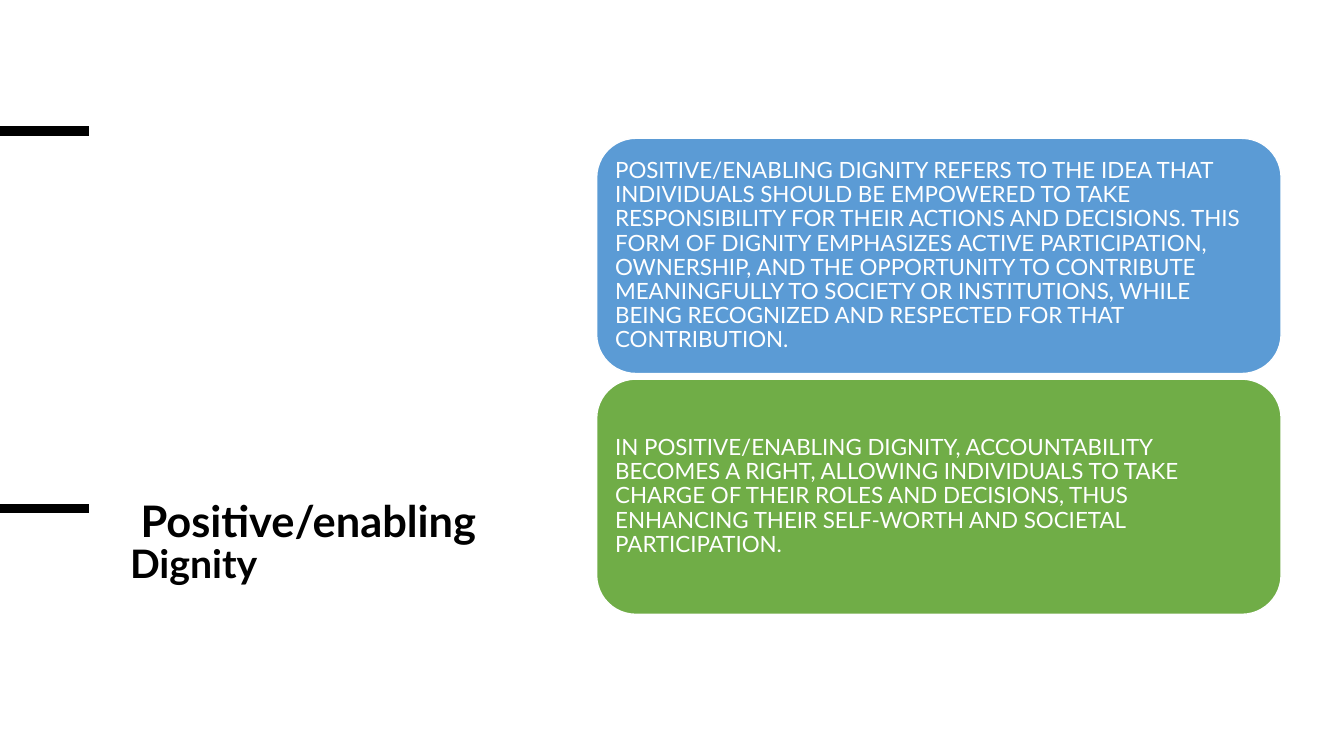
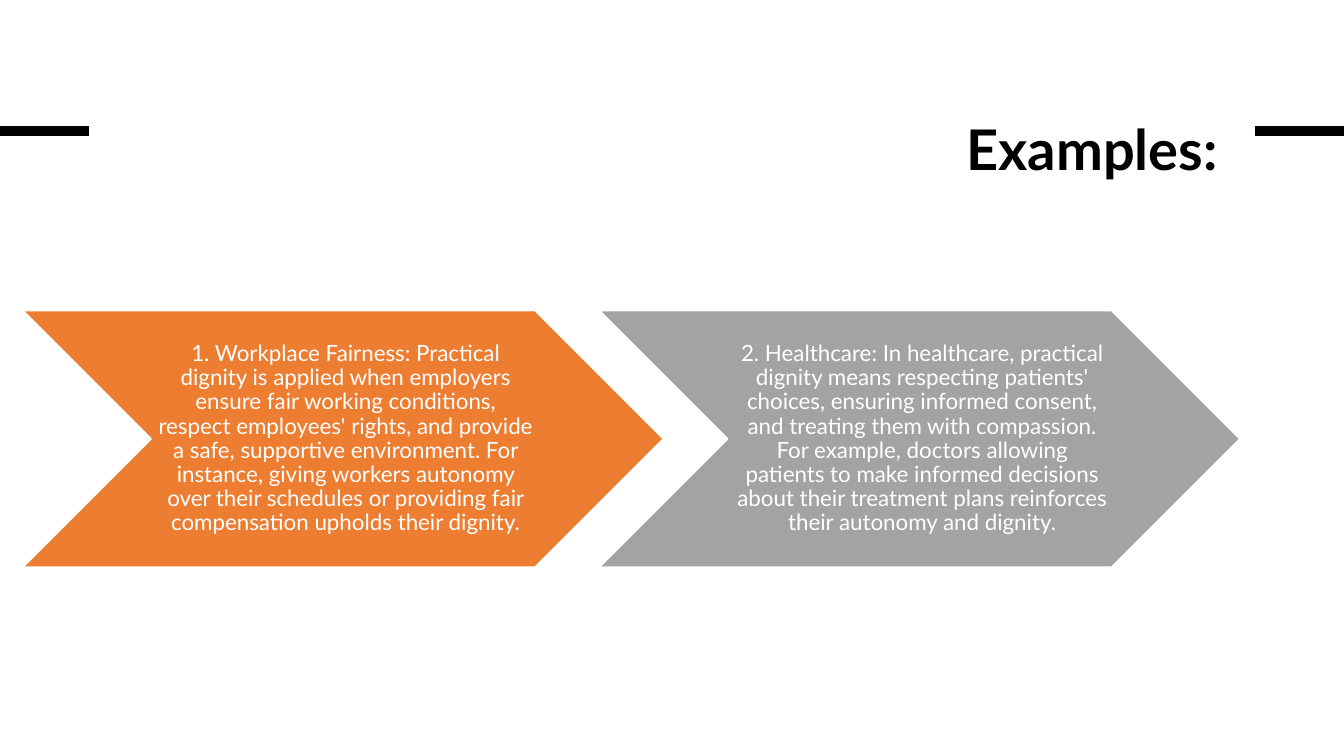
from lxml.etree import SubElement
from pptx import Presentation
from pptx.dml.color import RGBColor
from pptx.enum.shapes import MSO_CONNECTOR, MSO_SHAPE
from pptx.enum.text import MSO_ANCHOR, MSO_AUTO_SIZE, PP_ALIGN
from pptx.oxml.ns import qn
from pptx.util import Pt

WIDTH, HEIGHT = 960, 540
FONT = "Lato"
COLORS = {"black": "000000", "white": "FFFFFF", "blue": "5B9BD5",
          "green": "70AD47", "orange": "ED7D31", "gray": "A3A3A3"}

BAR_LENGTH, BAR_TOP, BAR_WEIGHT = 63.5, 93.6, 6.75
RIGHT_BAR_LEFT = WIDTH - BAR_LENGTH

SLIDES = [
    {
        "title": [(" Positive/enabling ", 31), ("Dignity", 28)],
        "title_box": (85.7, 355, 298, 141),
        "title_align": PP_ALIGN.LEFT,
        "extra_bar": (0, 362.9, 6.5),
        "shape": MSO_SHAPE.ROUNDED_RECTANGLE,
        "first_box": (426.2, 98.8, 488.9, 168),
        "step": (0, 172),
        "insets": (5, 5, 5, 5),
        "align": PP_ALIGN.LEFT,
        "blocks": [
            ("blue", "POSITIVE/ENABLING DIGNITY REFERS TO THE IDEA THAT INDIVIDUALS "
                     "SHOULD BE EMPOWERED TO TAKE RESPONSIBILITY FOR THEIR ACTIONS AND "
                     "DECISIONS. THIS FORM OF DIGNITY EMPHASIZES ACTIVE PARTICIPATION, "
                     "OWNERSHIP, AND THE OPPORTUNITY TO CONTRIBUTE MEANINGFULLY TO "
                     "SOCIETY OR INSTITUTIONS, WHILE BEING RECOGNIZED AND RESPECTED FOR "
                     "THAT CONTRIBUTION."),
            ("green", "IN POSITIVE/ENABLING DIGNITY, ACCOUNTABILITY BECOMES A RIGHT, "
                      "ALLOWING INDIVIDUALS TO TAKE CHARGE OF THEIR ROLES AND DECISIONS, "
                      "THUS ENHANCING THEIR SELF-WORTH AND SOCIETAL PARTICIPATION."),
        ],
    },
    {
        "title": [("Examples:", 40)],
        "title_box": (374.4, 85.7, 502.6, 123),
        "title_align": PP_ALIGN.RIGHT,
        "extra_bar": (RIGHT_BAR_LEFT, BAR_TOP, BAR_WEIGHT),
        "shape": MSO_SHAPE.CHEVRON,
        "first_box": (16.5, 222, 457.2, 183),
        "step": (411.8, 0),
        "insets": (5, 1.3, 1.3, 1.3),
        "align": PP_ALIGN.CENTER,
        "blocks": [
            ("orange", "1. Workplace Fairness: Practical dignity is applied when employers "
                       "ensure fair working conditions, respect employees' rights, and "
                       "provide a safe, supportive environment. For instance, giving "
                       "workers autonomy over their schedules or providing fair "
                       "compensation upholds their dignity."),
            ("gray", "2. Healthcare: In healthcare, practical dignity means respecting "
                     "patients' choices, ensuring informed consent, and treating them with "
                     "compassion. For example, doctors allowing patients to make informed "
                     "decisions about their treatment plans reinforces their autonomy and "
                     "dignity."),
        ],
    },
]


def color(name):
    return RGBColor.from_string(COLORS[name])


def set_insets(frame, left, top, right, bottom):
    frame.margin_left, frame.margin_top = Pt(left), Pt(top)
    frame.margin_right, frame.margin_bottom = Pt(right), Pt(bottom)


def add_bar(slide, left, top, weight):
    bar = slide.shapes.add_connector(MSO_CONNECTOR.STRAIGHT, Pt(left), Pt(top),
                                     Pt(left + BAR_LENGTH), Pt(top))
    bar.line.color.rgb = color("black")
    bar.line.width = Pt(weight)
    SubElement(bar._element.spPr, qn("a:effectLst"))


def format_title(slide, runs, box, align):
    title = slide.shapes.title
    title.left, title.top, title.width, title.height = map(Pt, box)
    frame = title.text_frame
    frame.word_wrap = True
    frame.auto_size = MSO_AUTO_SIZE.NONE
    frame.vertical_anchor = MSO_ANCHOR.TOP
    paragraph = frame.paragraphs[0]
    paragraph.alignment = align
    paragraph.line_spacing = 0.85
    paragraph.font.name = FONT
    paragraph.font.bold = True
    paragraph.font.color.rgb = color("black")
    for text, size in runs:
        run = paragraph.add_run()
        run.text = text
        run.font.size = Pt(size)


def add_block(slide, kind, box, fill, text, insets, align):
    shape = slide.shapes.add_shape(kind, *map(Pt, box))
    shape.shadow.inherit = False
    shape.fill.solid()
    shape.fill.fore_color.rgb = color(fill)
    shape.line.color.rgb = color("white")
    shape.line.width = Pt(1)
    frame = shape.text_frame
    frame.word_wrap = True
    frame.vertical_anchor = MSO_ANCHOR.MIDDLE
    set_insets(frame, *insets)
    paragraph = frame.paragraphs[0]
    paragraph.text = text
    paragraph.alignment = align
    paragraph.line_spacing = 0.9
    paragraph.space_after = Pt(5.6)
    paragraph.font.name = FONT
    paragraph.font.size = Pt(16)
    paragraph.font.color.rgb = color("white")


def build_slide(presentation, content):
    slide = presentation.slides.add_slide(presentation.slide_layouts[5])
    format_title(slide, content["title"], content["title_box"], content["title_align"])
    add_bar(slide, 0, BAR_TOP, BAR_WEIGHT)
    add_bar(slide, *content["extra_bar"])
    left, top, width, height = content["first_box"]
    step_x, step_y = content["step"]
    for index, (fill, text) in enumerate(content["blocks"]):
        box = (left + index * step_x, top + index * step_y, width, height)
        add_block(slide, content["shape"], box, fill, text,
                  content["insets"], content["align"])


def main():
    presentation = Presentation()
    presentation.slide_width, presentation.slide_height = Pt(WIDTH), Pt(HEIGHT)
    for content in SLIDES:
        build_slide(presentation, content)
    presentation.save("out.pptx")


if __name__ == "__main__":
    main()
